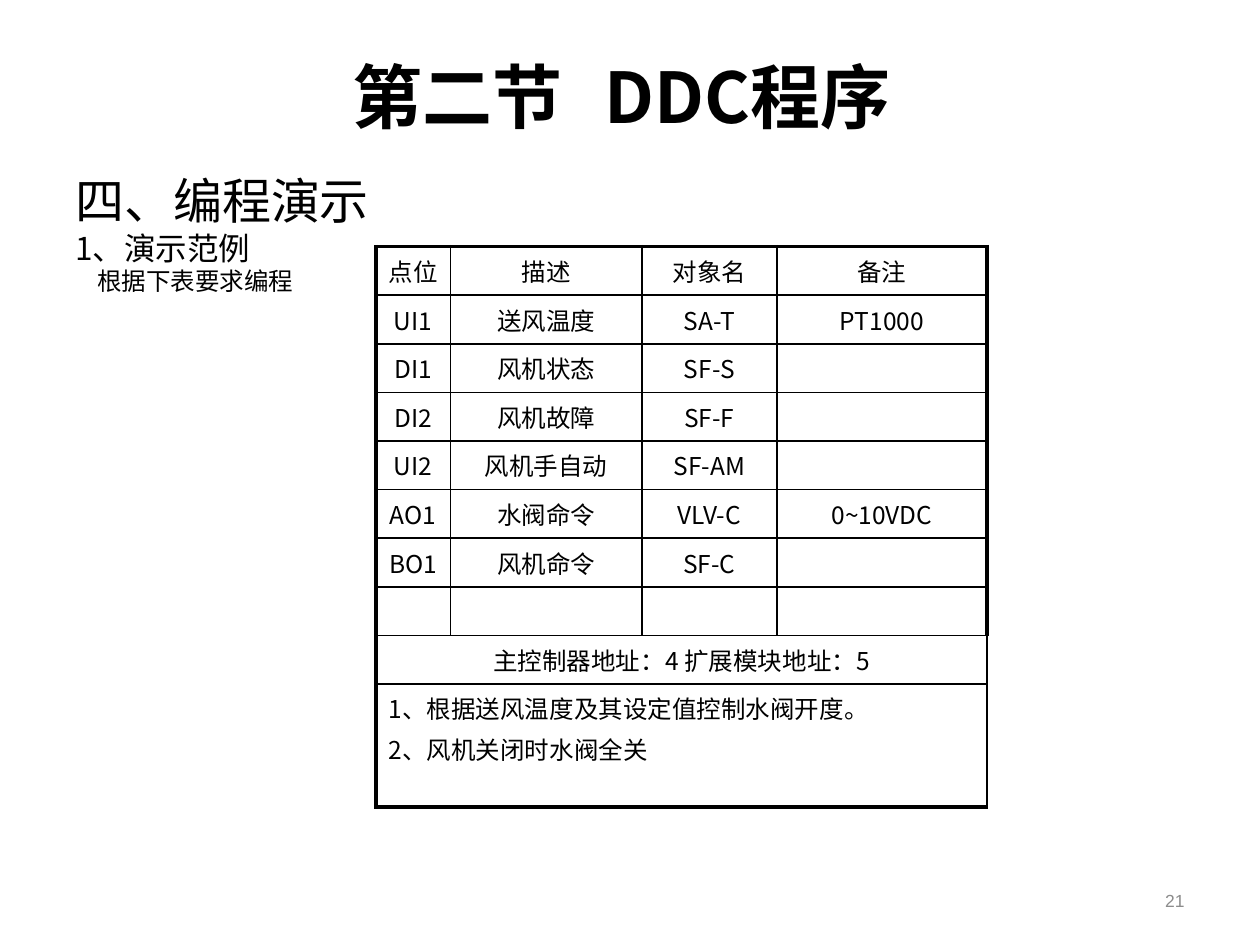
from dataclasses import dataclass

from lxml import etree
from pptx import Presentation, util as u
from pptx.dml.color import RGBColor
from pptx.enum import text
from pptx.oxml.ns import qn

COLOURS = {"ink": "000000", "page_number": "8C8C8C"}
CJK = "Noto Sans CJK SC"
CENTRE = text.PP_ALIGN.CENTER
THIN, THICK = u.Pt(1), u.Pt(2.25)


@dataclass
class Line:
    words: str
    size: float
    indent: float = 0


@dataclass
class Box:
    left: float
    top: float
    width: float
    height: float

    def lengths(self) -> list:
        return [u.Cm(v) for v in (self.left, self.top, self.width, self.height)]


def write(paragraph, words: str, *, size: float, font: str = CJK, colour: str = "ink",
          bold: bool = False, align=text.PP_ALIGN.LEFT, before: float = 0,
          spacing: float = 1.0, indent: float = 0) -> None:
    paragraph.alignment = align
    paragraph.line_spacing = spacing
    paragraph.space_before = u.Pt(before)
    if indent:
        properties = paragraph._p.get_or_add_pPr()
        properties.set("marL", str(u.Cm(indent)))
        properties.set("indent", "0")
    if not words:
        etree.SubElement(paragraph._p, qn("a:endParaRPr"), sz=str(size * 100))
        return
    run = paragraph.add_run()
    run.text = words
    run.font.size = u.Pt(size)
    run.font.bold = bold
    run.font.color.rgb = RGBColor.from_string(COLOURS[colour])
    run.font.name = font
    etree.SubElement(run._r.get_or_add_rPr(), qn("a:ea"), typeface=font)


def write_lines(frame, lines: list[Line], **layout) -> None:
    for index, line in enumerate(lines):
        paragraph = frame.add_paragraph() if index else frame.paragraphs[0]
        write(paragraph, line.words, size=line.size, indent=line.indent,
              before=0.2 * line.size if index else 0, **layout)


def add_frame(slide, box: Box, anchor=text.MSO_ANCHOR.TOP):
    frame = slide.shapes.add_textbox(*box.lengths()).text_frame
    frame.word_wrap = True
    frame.vertical_anchor = anchor
    return frame


def draw_borders(cell, widths: dict[str, int]) -> None:
    properties = cell._tc.get_or_add_tcPr()
    for position, (side, width) in enumerate(widths.items()):
        border = etree.Element(qn(f"a:{side}"), w=str(width))
        fill = etree.SubElement(border, qn("a:solidFill"))
        etree.SubElement(fill, qn("a:srgbClr"), val=COLOURS["ink"])
        properties.insert(position, border)


def add_points_table(slide, box: Box, widths: list[float], points: list[tuple],
                     addresses: str, rules: list[Line]) -> None:
    row_count, column_count = len(points) + 2, len(widths)
    table = slide.shapes.add_table(row_count, column_count, *box.lengths()).table
    table.first_row = table.horz_banding = False
    for column, width in zip(table.columns, widths):
        column.width = u.Cm(width)
    row_height = 0.98
    for row in table.rows:
        row.height = u.Cm(row_height)
    table.rows[row_count - 1].height = u.Cm(box.height - row_height * (row_count - 1))

    for r in range(row_count):
        for c in range(column_count):
            cell = table.cell(r, c)
            cell.fill.background()
            draw_borders(cell, {
                "lnL": THIN if c else THICK,
                "lnR": THICK if c == column_count - 1 else THIN,
                "lnT": THIN if r else THICK,
                "lnB": THICK if r == row_count - 1 else THIN,
            })
    for r in (row_count - 2, row_count - 1):
        table.cell(r, 0).merge(table.cell(r, column_count - 1))
    for r, point in enumerate(points):
        for c, words in enumerate(point):
            write_lines(table.cell(r, c).text_frame, [Line(words, 14)], align=CENTRE)
    write_lines(table.cell(row_count - 2, 0).text_frame, [Line(addresses, 14)], align=CENTRE)
    write_lines(table.cell(row_count - 1, 0).text_frame, rules)


def main() -> None:
    deck = Presentation()
    deck.slide_width, deck.slide_height = u.Cm(25.4), u.Cm(19.05)
    slide = deck.slides.add_slide(deck.slide_layouts[6])

    title = add_frame(slide, Box(1.24, 1.07, 22.83, 1.85), text.MSO_ANCHOR.MIDDLE)
    title.margin_left = title.margin_top = 0
    write(title.paragraphs[0], "第二节\tDDC程序", size=40, bold=True, align=CENTRE)

    section = add_frame(slide, Box(1.27, 3.4, 22.73, 13.28))
    section.margin_top = u.Cm(0.25)
    write_lines(section, [
        Line("四、编程演示", 28),
        Line("1、演示范例", 18),
        Line("根据下表要求编程", 14, indent=0.44),
    ], spacing=0.82)

    points = [
        ("点位", "描述", "对象名", "备注"),
        ("UI1", "送风温度", "SA-T", "PT1000"),
        ("DI1", "风机状态", "SF-S", ""),
        ("DI2", "风机故障", "SF-F", ""),
        ("UI2", "风机手自动", "SF-AM", ""),
        ("AO1", "水阀命令", "VLV-C", "0~10VDC"),
        ("BO1", "风机命令", "SF-C", ""),
        ("", "", "", ""),
    ]
    rules = [Line("1、根据送风温度及其设定值控制水阀开度。", 14),
             Line("2、风机关闭时水阀全关", 14)]
    add_points_table(slide, Box(7.58, 4.97, 12.32, 11.3), [1.5, 3.86, 2.72, 4.24],
                     points, "主控制器地址：4 扩展模块地址：5", rules)

    page_number = add_frame(slide, Box(18.21, 17.65, 5.92, 1.02), text.MSO_ANCHOR.MIDDLE)
    write(page_number.paragraphs[0], "21", size=10, font="Arial", colour="page_number",
          align=text.PP_ALIGN.RIGHT)

    deck.save("out.pptx")


if __name__ == "__main__":
    main()
